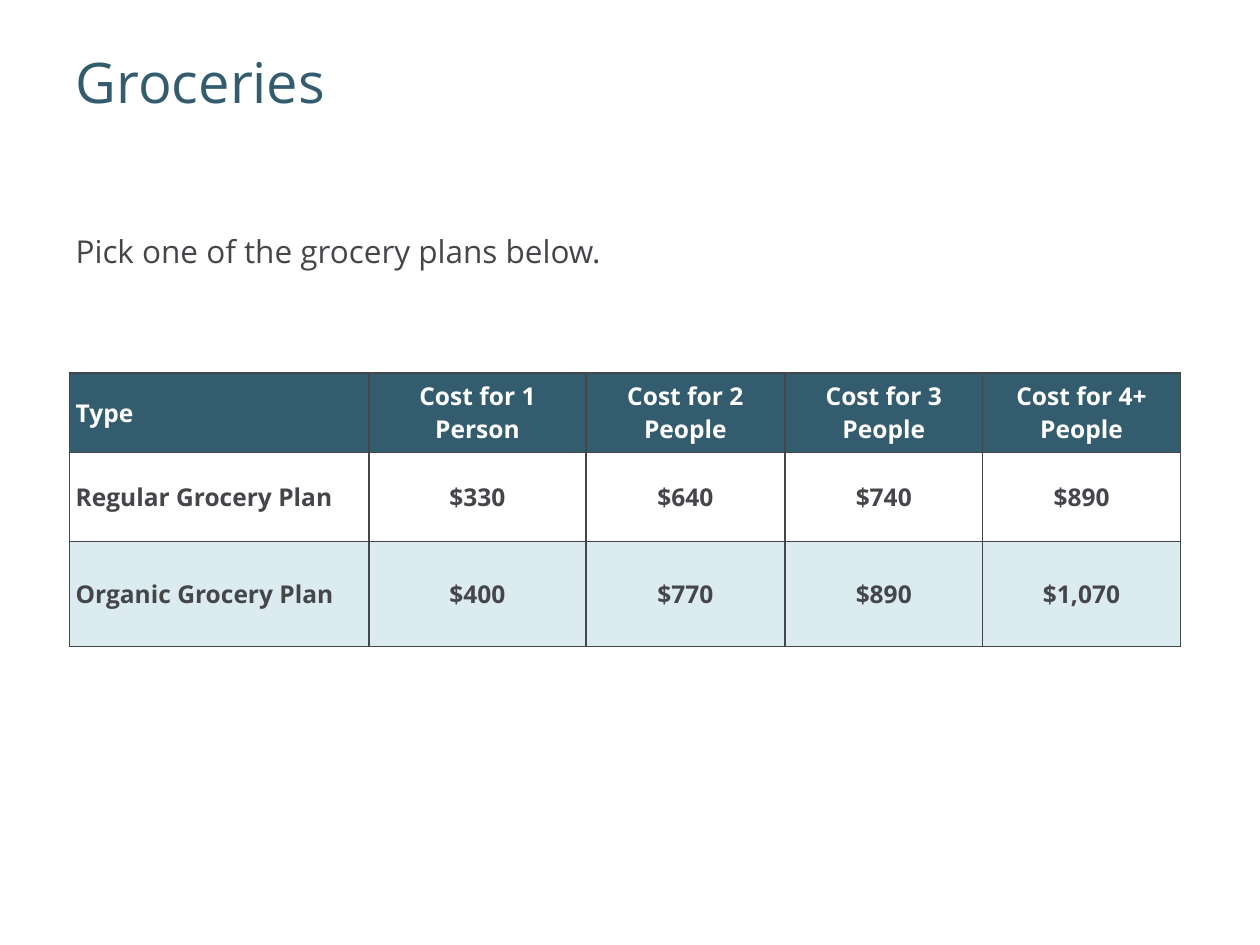
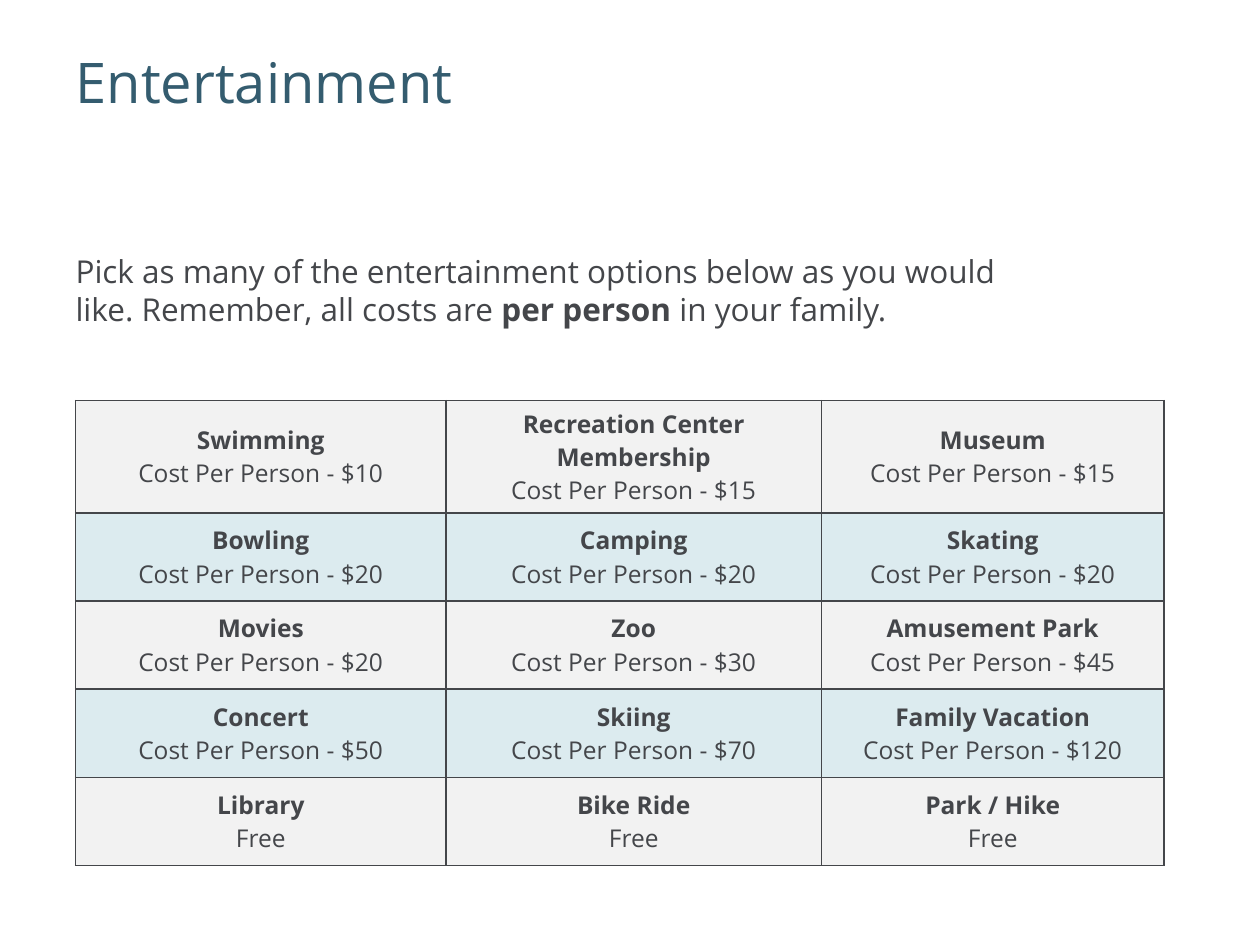
from dataclasses import dataclass

import pptx
import pptx.dml.color
import pptx.enum.text
import pptx.oxml
import pptx.oxml.ns
import pptx.presentation
import pptx.slide
import pptx.table
import pptx.text.text
import pptx.util

Inches = pptx.util.Inches
Pt = pptx.util.Pt
Align = pptx.enum.text.PP_ALIGN
Anchor = pptx.enum.text.MSO_ANCHOR


@dataclass(frozen=True)
class Theme:
    font: str = "Open Sans"
    teal: str = "345C6F"
    ink: str = "44464A"
    white: str = "FFFFFF"
    pale: str = "DCEBEF"
    gray: str = "F2F2F2"
    title: int = 32
    body: int = 18
    cell: int = 14
    rule: int = 1
    pad: float = 0.05


@dataclass(frozen=True)
class Run:
    text: str
    size: int
    color: str
    bold: bool = False


@dataclass(frozen=True)
class Box:
    left: float
    top: float
    width: float
    height: float


@dataclass(frozen=True)
class Cell:
    lines: list[Run]
    fill: str
    align: Align = Align.CENTER


@dataclass(frozen=True)
class Grid:
    left: float
    top: float
    cols: list[float]
    rows: list[float]
    cells: list[list[Cell]]


THEME = Theme()
TITLE = Box(0.6, 0.35, 9, 1.25)


def add_run(para: pptx.text.text._Paragraph, item: Run) -> None:
    run = para.add_run()
    run.text = item.text
    font = run.font
    font.name = THEME.font
    font.size = Pt(item.size)
    font.bold = item.bold
    font.color.rgb = pptx.dml.color.RGBColor.from_string(item.color)


def add_text(slide: pptx.slide.Slide, box: Box, runs: list[Run],
             anchor: Anchor, pitch: float, after: int = 0) -> None:
    shape = slide.shapes.add_textbox(
        Inches(box.left), Inches(box.top), Inches(box.width), Inches(box.height))
    frame = shape.text_frame
    frame.word_wrap = True
    frame.vertical_anchor = anchor
    frame.margin_left = frame.margin_right = Inches(0)
    frame.margin_top = frame.margin_bottom = Inches(0)
    para = frame.paragraphs[0]
    para.line_spacing = pitch
    para.space_after = Pt(after)
    for item in runs:
        add_run(para, item)


def add_rules(cell: pptx.table._Cell) -> None:
    props = cell._tc.get_or_add_tcPr()
    space = pptx.oxml.ns.nsdecls("a")
    for place, side in enumerate("LRTB"):
        props.insert(place, pptx.oxml.parse_xml(
            f'<a:ln{side} {space} w="{Pt(THEME.rule)}"><a:solidFill>'
            f'<a:srgbClr val="{THEME.ink}"/></a:solidFill></a:ln{side}>'))


def fill_cell(cell: pptx.table._Cell, item: Cell) -> None:
    cell.vertical_anchor = Anchor.MIDDLE
    cell.margin_left = cell.margin_right = Inches(THEME.pad)
    cell.margin_top = cell.margin_bottom = Inches(THEME.pad)
    cell.fill.solid()
    cell.fill.fore_color.rgb = pptx.dml.color.RGBColor.from_string(item.fill)
    add_rules(cell)
    frame = cell.text_frame
    for order, line in enumerate(item.lines):
        para = frame.add_paragraph() if order else frame.paragraphs[0]
        para.alignment = item.align
        add_run(para, line)


def add_grid(slide: pptx.slide.Slide, grid: Grid) -> None:
    table = slide.shapes.add_table(
        len(grid.rows), len(grid.cols), Inches(grid.left), Inches(grid.top),
        Inches(sum(grid.cols)), Inches(sum(grid.rows))).table
    table.first_row = table.horz_banding = False
    for col, width in zip(table.columns, grid.cols):
        col.width = Inches(width)
    for row, height, items in zip(table.rows, grid.rows, grid.cells):
        row.height = Inches(height)
        for cell, item in zip(row.cells, items):
            fill_cell(cell, item)


def add_page(deck: pptx.presentation.Presentation, title: str,
             box: Box, intro: list[Run], grid: Grid) -> None:
    slide = deck.slides.add_slide(deck.slide_layouts[6])
    add_text(slide, TITLE, [Run(title, THEME.title, THEME.teal)], Anchor.TOP, 1.05)
    add_text(slide, box, intro, Anchor.MIDDLE, 1.0, 12)
    add_grid(slide, grid)


def body(text: str, bold: bool = False) -> Run:
    return Run(text, THEME.body, THEME.ink, bold)


def plan_row(texts: list[str], fill: str, color: str) -> list[Cell]:
    return [Cell([Run(text, THEME.cell, color, True)], fill,
                 Align.CENTER if order else Align.LEFT)
            for order, text in enumerate(texts)]


def fun_cell(name: str, cost: int, fill: str) -> Cell:
    price = f"Cost Per Person - ${cost}" if cost else "Free"
    return Cell([Run(name, THEME.cell, THEME.ink, True),
                 Run(price, THEME.cell, THEME.ink)], fill)


def add_food(deck: pptx.presentation.Presentation) -> None:
    heads = ["Type"] + [f"Cost for {count}" for count in
                        ("1 Person", "2 People", "3 People", "4+ People")]
    cells = [
        plan_row(heads, THEME.teal, THEME.white),
        plan_row(["Regular Grocery Plan", "$330", "$640", "$740", "$890"],
                 THEME.white, THEME.ink),
        plan_row(["Organic Grocery Plan", "$400", "$770", "$890", "$1,070"],
                 THEME.pale, THEME.ink),
    ]
    grid = Grid(0.55, 2.96, [2.38, 1.72, 1.58, 1.57, 1.57], [0.63, 0.71, 0.83], cells)
    add_page(deck, "Groceries", Box(0.6, 1.68, 6.45, 0.62),
             [body("Pick one of the grocery plans below.")], grid)


def add_fun(deck: pptx.presentation.Presentation) -> None:
    costs = [
        [("Swimming", 10), ("Recreation Center Membership", 15), ("Museum", 15)],
        [("Bowling", 20), ("Camping", 20), ("Skating", 20)],
        [("Movies", 20), ("Zoo", 30), ("Amusement Park", 45)],
        [("Concert", 50), ("Skiing", 70), ("Family Vacation", 120)],
        [("Library", 0), ("Bike Ride", 0), ("Park / Hike", 0)],
    ]
    bands = [THEME.gray, THEME.pale]
    cells = [[fun_cell(name, cost, bands[order % 2]) for name, cost in row]
             for order, row in enumerate(costs)]
    intro = [
        body("Pick as many of the entertainment options below as you would like. "
             "Remember, all costs are "),
        body("per person ", True),
        body("in your family."),
    ]
    rows = [0.89] + [0.7] * (len(costs) - 1)
    grid = Grid(0.6, 3.18, [2.94, 2.98, 2.72], rows, cells)
    add_page(deck, "Entertainment", Box(0.6, 1.83, 7.46, 0.94), intro, grid)


def main() -> None:
    deck = pptx.Presentation()
    deck.slide_width = Inches(10)
    deck.slide_height = Inches(7.5)
    add_food(deck)
    add_fun(deck)
    deck.save("out.pptx")


if __name__ == "__main__":
    main()
